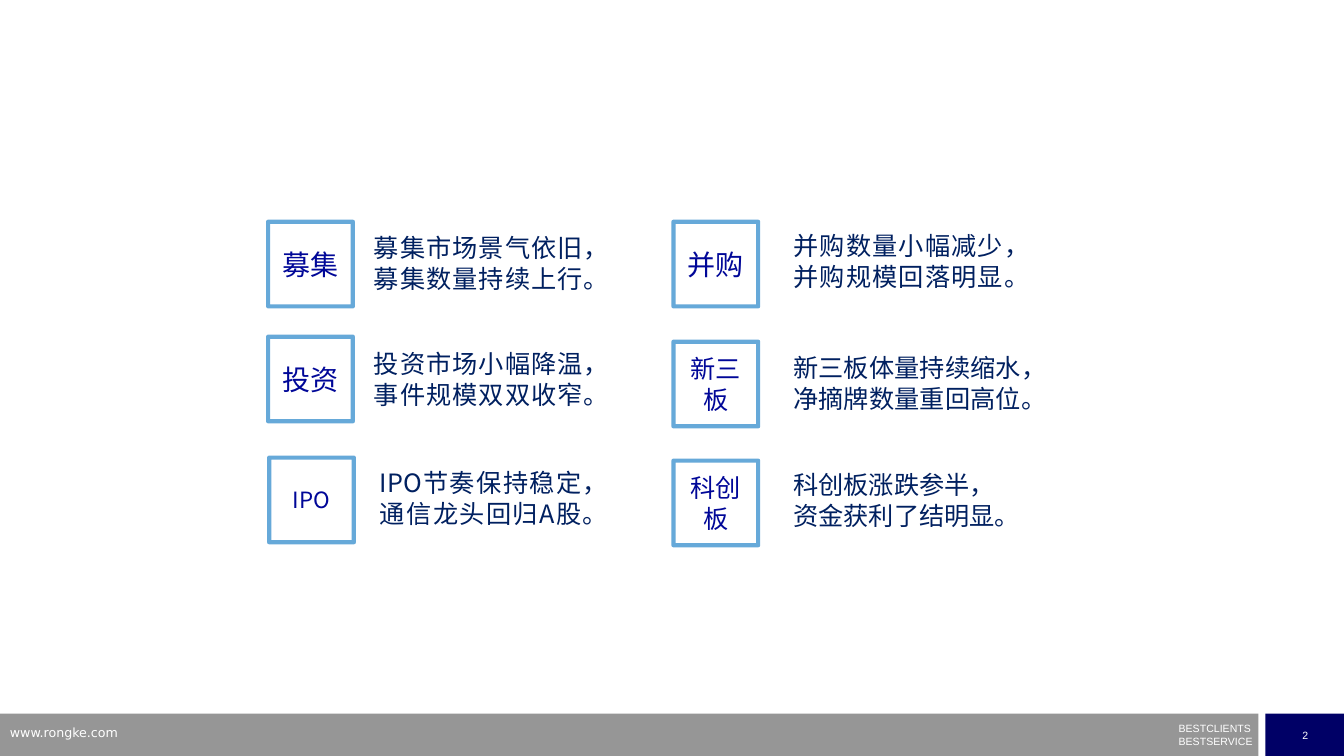
from lxml import etree
from pptx import Presentation
from pptx.dml.color import RGBColor
from pptx.enum.shapes import MSO_SHAPE
from pptx.enum.text import MSO_ANCHOR, PP_ALIGN
from pptx.oxml.ns import qn
from pptx.util import Inches, Pt

RECTANGLE = MSO_SHAPE.RECTANGLE
MIDDLE, TOP = MSO_ANCHOR.MIDDLE, MSO_ANCHOR.TOP
LEFT, CENTER, JUSTIFY = PP_ALIGN.LEFT, PP_ALIGN.CENTER, PP_ALIGN.JUSTIFY

WHITE = RGBColor(0xFF, 0xFF, 0xFF)
GRAY = RGBColor(0x96, 0x96, 0x96)
NAVY = RGBColor(0x00, 0x00, 0x66)
FRAME_BLUE = RGBColor(0x00, 0x70, 0xC0)
LABEL_BLUE = RGBColor(0x00, 0x07, 0x98)
TEXT_BLUE = RGBColor(0x00, 0x20, 0x60)

presentation = Presentation()
presentation.slide_width = Inches(13.33)
presentation.slide_height = Inches(7.5)
slide = presentation.slides.add_slide(presentation.slide_layouts[6])


def add_rectangle(left, top, width, height, fill=None):
    shape = slide.shapes.add_shape(
        RECTANGLE, Inches(left), Inches(top), Inches(width), Inches(height))
    shape.shadow.inherit = False
    if fill is None:
        shape.fill.background()
    else:
        shape.fill.solid()
        shape.fill.fore_color.rgb = fill
        shape.line.fill.background()
    return shape


def write_text(shape, lines, font, size, color, alignment=LEFT, anchor=TOP):
    frame = shape.text_frame
    frame.word_wrap = True
    frame.vertical_anchor = anchor
    frame.text = "\n".join(lines)
    for paragraph in frame.paragraphs:
        paragraph.alignment = alignment
        for run in paragraph.runs:
            for name, value in {"name": font, "size": Pt(size)}.items():
                setattr(run.font, name, value)
            run.font.color.rgb = color
            east_asian = etree.SubElement(run.font._element, qn("a:ea"))
            east_asian.set("typeface", font)


# Footer bar and page number
add_rectangle(0, 7.08, 12.48, 0.42, GRAY)
page_number = add_rectangle(12.55, 7.08, 0.79, 0.42, NAVY)
write_text(page_number, ["2"], "Arial", 7.5, WHITE, CENTER, MIDDLE)

# Footer slogan
slogan = slide.shapes.add_textbox(Inches(11.69), Inches(7.22), Inches(0.76), Inches(0.2))
for side in ("left", "top", "right", "bottom"):
    setattr(slogan.text_frame, f"margin_{side}", 0)
write_text(slogan, ["BESTCLIENTS", "BESTSERVICE"], "Arial", 7.5, WHITE)
for paragraph in slogan.text_frame.paragraphs:
    paragraph.line_spacing = 0.5
slogan.text_frame.paragraphs[1].space_before = Pt(4.3)

# Footer web address
address = slide.shapes.add_textbox(0, Inches(7.14), Inches(3.2), Inches(0.26))
write_text(address, ["www.rongke.com"], "DejaVu Sans", 9, WHITE)

# Topics: label, label size, frame left and top, text left, top and width, lines
TOPICS = [
    ("募集", 20, 2.66, 2.2, 3.61, 2.26, 2.28, ["募集市场景气依旧，", "募集数量持续上行。"]),
    ("投资", 20, 2.66, 3.34, 3.61, 3.41, 2.28, ["投资市场小幅降温，事件规模双双收窄。"]),
    ("IPO", 16, 2.67, 4.54, 3.67, 4.59, 2.21, ["IPO节奏保持稳定，", "通信龙头回归A股。"]),
    ("并购", 20, 6.68, 2.2, 7.77, 2.24, 2.29, ["并购数量小幅减少，", "并购规模回落明显。"]),
    ("新三板", 18, 6.68, 3.39, 7.77, 3.45, 2.46, ["新三板体量持续缩水，", "净摘牌数量重回高位。"]),
    ("科创板", 18, 6.68, 4.57, 7.77, 4.61, 2.71, ["科创板涨跌参半，", "资金获利了结明显。"]),
]
FRAME_SIZE = 0.84

for label, size, left, top, text_left, text_top, text_width, lines in TOPICS:
    # Framed label with a 60 % opaque outline
    frame = add_rectangle(left, top, FRAME_SIZE, FRAME_SIZE)
    frame.line.width = Pt(3)
    frame.line.color.rgb = FRAME_BLUE
    line_color = frame.line._ln.find(".//" + qn("a:srgbClr"))
    etree.SubElement(line_color, qn("a:alpha")).set("val", "60000")
    write_text(frame, [label], "Noto Sans CJK JP", size, LABEL_BLUE, CENTER, MIDDLE)

    # Summary beside the label
    summary = slide.shapes.add_textbox(
        Inches(text_left), Inches(text_top), Inches(text_width), Inches(0.71))
    write_text(summary, lines, "Noto Sans CJK SC", 18, TEXT_BLUE, JUSTIFY)

presentation.save("out.pptx")
